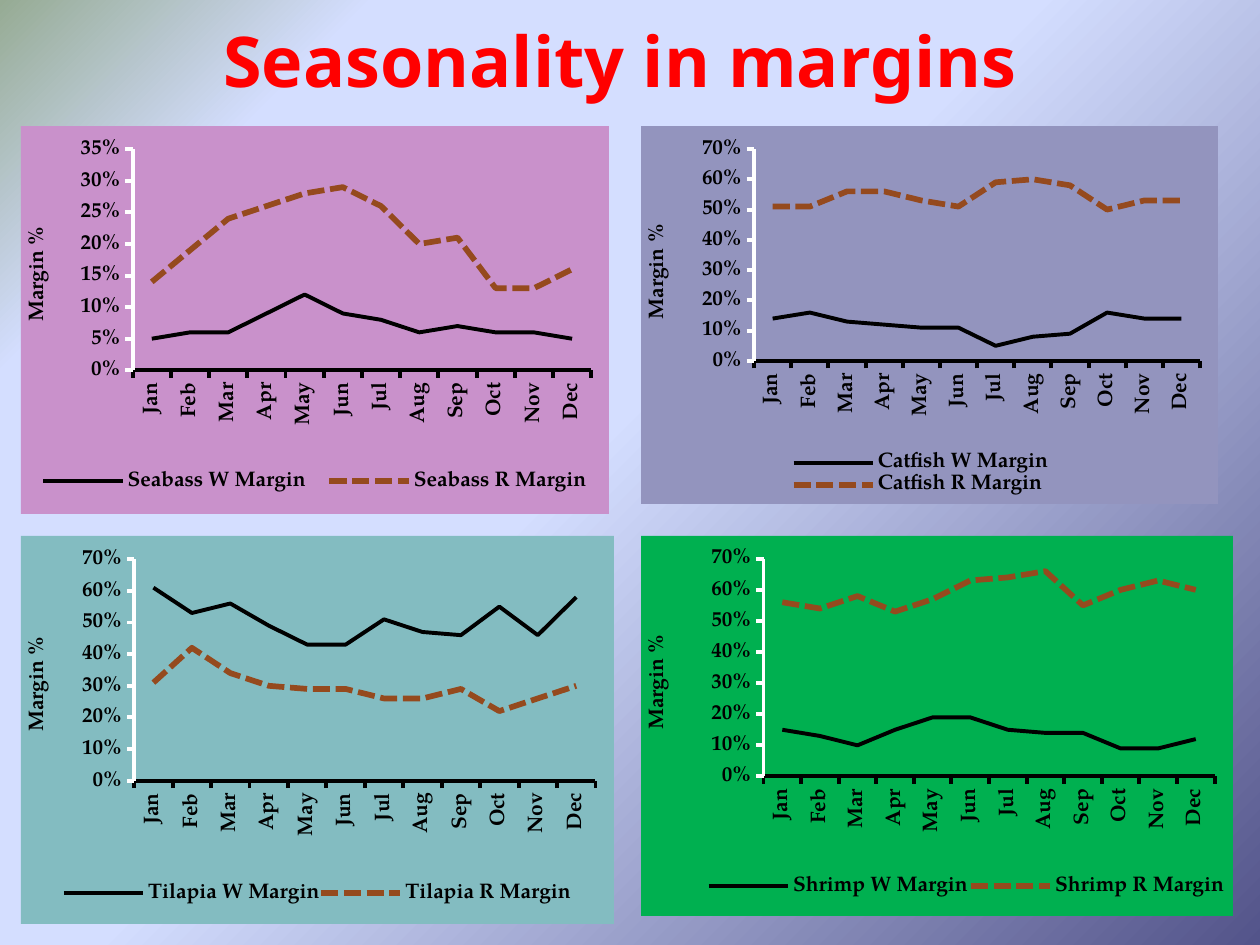
from lxml.etree import SubElement
from pptx import Presentation
from pptx.chart.data import CategoryChartData
from pptx.dml.color import RGBColor
from pptx.enum.chart import XL_CHART_TYPE as ChartType
from pptx.enum.chart import XL_LEGEND_POSITION as LegendPosition
from pptx.enum.chart import XL_TICK_MARK as TickMark
from pptx.enum.dml import MSO_LINE as LineDash
from pptx.enum.text import MSO_ANCHOR as Anchor
from pptx.enum.text import PP_ALIGN as Align
from pptx.oxml import parse_xml
from pptx.oxml.ns import nsdecls, qn
from pptx.util import Emu, Pt

PX = 914400 / 126
COLORS = {
    "title": "FF0000", "black": "000000", "white": "FFFFFF", "retail": "954A1E",
    "seabass": "C991CB", "catfish": "9394BE", "tilapia": "83BCC1", "shrimp": "00B050",
}
BACKGROUND_STOPS = [(0, "53548A"), (53, "D4DEFF"), (83, "D4DEFF"), (100, "96AB94")]
TITLE_FONT = "Noto Sans"
CHART_FONT = "TeX Gyre Pagella"
MONTHS = "Jan Feb Mar Apr May Jun Jul Aug Sep Oct Nov Dec".split()
AXIS_TITLE_PLACE = (0, 0.25)

PANELS = [
    dict(fish="Seabass", box=(21, 126, 588, 388), top=0.35, step=0.05,
         plot=(0.19, 0.06, 0.78, 0.57), legend=(0.01, 0.88, 0.98, 0.07),
         wholesale=[0.05, 0.06, 0.06, 0.09, 0.12, 0.09, 0.08, 0.06, 0.07, 0.06, 0.06, 0.05],
         retail=[0.14, 0.19, 0.24, 0.26, 0.28, 0.29, 0.26, 0.2, 0.21, 0.13, 0.13, 0.16]),
    dict(fish="Catfish", box=(641, 126, 577, 378), top=0.7, step=0.1,
         plot=(0.196, 0.061, 0.773, 0.561), legend=(0.26, 0.86, 0.45, 0.12),
         wholesale=[0.14, 0.16, 0.13, 0.12, 0.11, 0.11, 0.05, 0.08, 0.09, 0.16, 0.14, 0.14],
         retail=[0.51, 0.51, 0.56, 0.56, 0.53, 0.51, 0.59, 0.6, 0.58, 0.5, 0.53, 0.53]),
    dict(fish="Tilapia", box=(21, 536, 593, 388), top=0.7, step=0.1,
         plot=(0.191, 0.06, 0.778, 0.571), legend=(0.07, 0.885, 0.86, 0.07),
         wholesale=[0.61, 0.53, 0.56, 0.49, 0.43, 0.43, 0.51, 0.47, 0.46, 0.55, 0.46, 0.58],
         retail=[0.31, 0.42, 0.34, 0.3, 0.29, 0.29, 0.26, 0.26, 0.29, 0.22, 0.26, 0.3]),
    dict(fish="Shrimp", box=(641, 536, 592, 380), top=0.7, step=0.1,
         plot=(0.207, 0.06, 0.762, 0.573), legend=(0.11, 0.886, 0.88, 0.07),
         wholesale=[0.15, 0.13, 0.1, 0.15, 0.19, 0.19, 0.15, 0.14, 0.14, 0.09, 0.09, 0.12],
         retail=[0.56, 0.54, 0.58, 0.53, 0.57, 0.63, 0.64, 0.66, 0.55, 0.6, 0.63, 0.6]),
]


def px(value):
    return Emu(round(value * PX))


def rgb(name):
    return RGBColor.from_string(COLORS[name])


def style_font(font, name, size, color):
    font.name = name
    font.size = Pt(size)
    font.bold = True
    font.color.rgb = rgb(color)


def style_line(line, color, width):
    line.color.rgb = rgb(color)
    line.width = Pt(width)


def set_background(slide):
    slide.background.fill.gradient()
    stops = "".join(
        f'<a:gs pos="{position * 1000}"><a:srgbClr val="{color}"/></a:gs>'
        for position, color in BACKGROUND_STOPS
    )
    gradient = parse_xml(
        f'<a:gradFill {nsdecls("a")} rotWithShape="1"><a:gsLst>{stops}</a:gsLst>'
        '<a:path path="circle"><a:fillToRect l="100000" t="100000"/></a:path></a:gradFill>'
    )
    previous = slide.element.xpath("p:cSld/p:bg/p:bgPr/a:gradFill")[0]
    previous.getparent().replace(previous, gradient)


def add_title(slide, box, text):
    frame = slide.shapes.add_textbox(*map(px, box)).text_frame
    frame.word_wrap = True
    frame.vertical_anchor = Anchor.MIDDLE
    paragraph = frame.paragraphs[0]
    paragraph.alignment = Align.CENTER
    run = paragraph.add_run()
    run.text = text
    style_font(run.font, TITLE_FONT, 40, "title")


def set_layout(owner, index, place, inner=False):
    for previous in owner.findall(qn("c:layout")):
        owner.remove(previous)
    layout = parse_xml(f'<c:layout {nsdecls("c")}/>')
    manual = SubElement(layout, qn("c:manualLayout"))
    settings = [("layoutTarget", "inner")] if inner else []
    settings += [("xMode", "edge"), ("yMode", "edge")]
    settings += zip("xywh", map(str, place))
    for tag, value in settings:
        SubElement(manual, qn(f"c:{tag}")).set("val", value)
    owner.insert(index, layout)


def fill_chart_area(chart, color):
    area = parse_xml(
        f'<c:spPr {nsdecls("c", "a")}><a:solidFill><a:srgbClr val="{COLORS[color]}"/>'
        '</a:solidFill><a:ln><a:noFill/></a:ln></c:spPr>'
    )
    chart.element.find(qn("c:chart")).addnext(area)


def style_axes(chart, top, step):
    months, margins = chart.category_axis, chart.value_axis
    for axis, color in ((months, "black"), (margins, "white")):
        axis.has_major_gridlines = False
        axis.major_tick_mark = TickMark.OUTSIDE
        style_line(axis.format.line, color, 2.25)
        style_font(axis.tick_labels.font, CHART_FONT, 12, "black")
    margins.minimum_scale = 0
    margins.maximum_scale = top
    margins.major_unit = step
    margins.tick_labels.number_format = "0%"
    margins.tick_labels.number_format_is_linked = False
    run = margins.axis_title.text_frame.paragraphs[0].add_run()
    run.text = "Margin %"
    style_font(run.font, CHART_FONT, 12, "black")
    for place in ("c:catAx/c:txPr/a:bodyPr", "c:valAx/c:title//a:bodyPr"):
        body = chart.element.xpath(f"c:chart/c:plotArea/{place}")[0]
        body.set("rot", "-5400000")
        body.set("vert", "horz")


def add_margin_chart(slide, fish, box, top, step, plot, legend, wholesale, retail):
    data = CategoryChartData(number_format="0%")
    data.categories = MONTHS
    data.add_series(f"{fish} W Margin", wholesale)
    data.add_series(f"{fish} R Margin", retail)
    chart = slide.shapes.add_chart(ChartType.LINE, *map(px, box), data).chart
    chart.has_title = False
    style_font(chart.font, CHART_FONT, 12, "black")
    fill_chart_area(chart, fish.lower())
    style_axes(chart, top, step)

    chart.plots[0].vary_by_categories = False
    wholesale_line, retail_line = chart.plots[0].series
    for series, color, width in ((wholesale_line, "black", 2.25), (retail_line, "retail", 3.25)):
        series.smooth = False
        style_line(series.format.line, color, width)
    retail_line.format.line.dash_style = LineDash.SQUARE_DOT

    chart.has_legend = True
    chart.legend.position = LegendPosition.BOTTOM
    chart.legend.include_in_layout = False
    style_font(chart.legend.font, CHART_FONT, 12, "black")

    plot_area = chart.element.xpath("c:chart/c:plotArea")[0]
    set_layout(plot_area, 0, plot, inner=True)
    set_layout(plot_area.xpath("c:valAx/c:title")[0], 1, AXIS_TITLE_PLACE)
    set_layout(chart.element.xpath("c:chart/c:legend")[0], 1, legend)


def main():
    presentation = Presentation()
    presentation.slide_width, presentation.slide_height = px(1260), px(945)
    slide = presentation.slides.add_slide(presentation.slide_layouts[6])
    set_background(slide)
    add_title(slide, (53, 10, 1134, 98), "Seasonality in margins")
    for panel in PANELS:
        add_margin_chart(slide, **panel)
    presentation.save("out.pptx")


if __name__ == "__main__":
    main()
